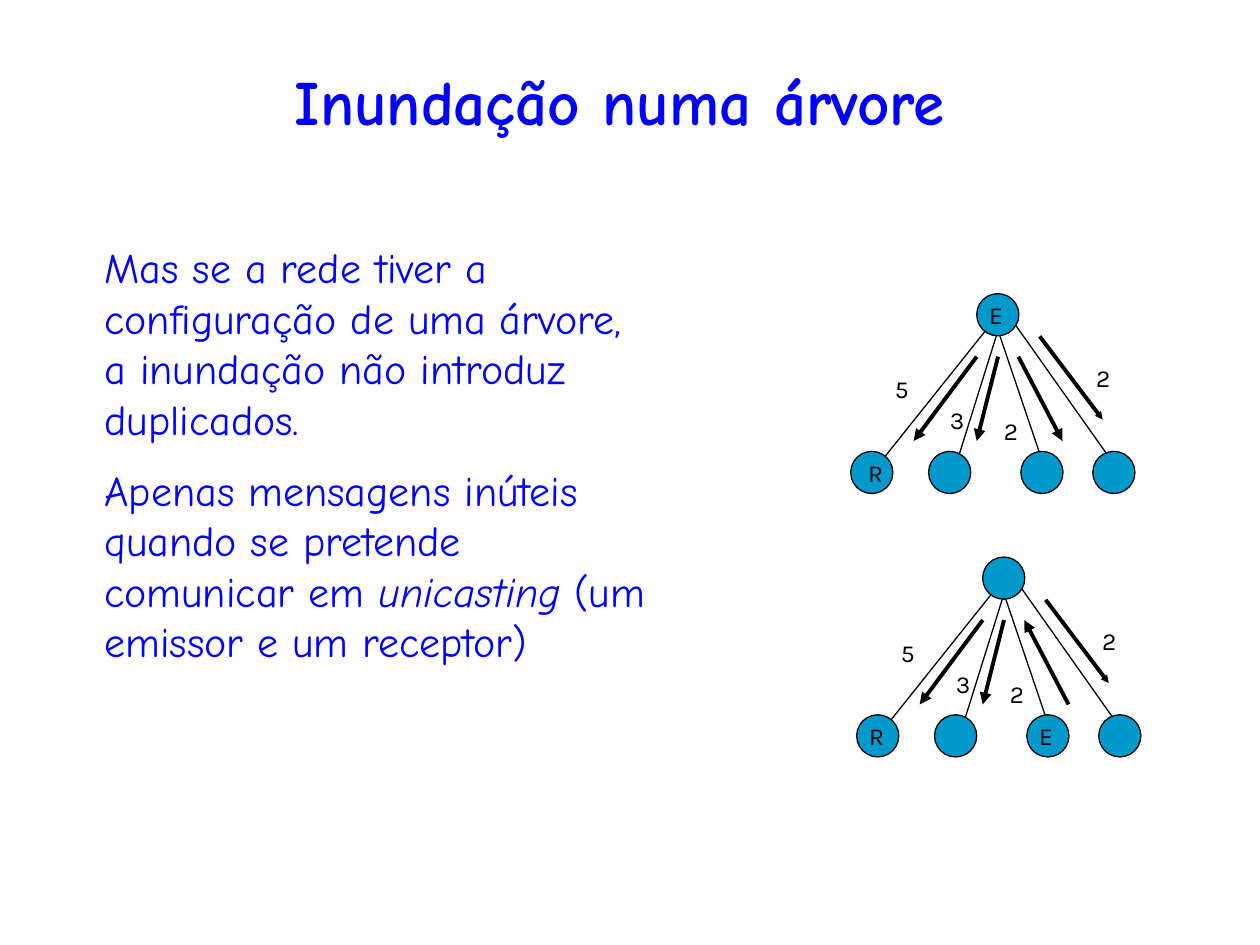
from lxml.etree import SubElement
from pptx import Presentation
from pptx.dml.color import RGBColor
from pptx.enum.shapes import MSO_CONNECTOR as Link, MSO_SHAPE as Shape
from pptx.enum.text import MSO_ANCHOR as Anchor, MSO_AUTO_SIZE as Fit, PP_ALIGN as Align
from pptx.oxml.ns import qn
from pptx.util import Cm, Pt

COLOURS = {"text": "0000FF", "node": "0099CC", "ink": "000000"}
TITLE_FONT = {"name": "Comic Neue", "size": Pt(36), "bold": True}
BODY_FONT = {"name": "Comic Neue", "size": Pt(24), "bold": False}
LABEL_FONT = {"name": "Karla", "size": Pt(14)}

NODE_SIZE = 0.85
ROOT = (2.54, 0)
LEAVES = [(left, 3.18) for left in (0, 1.57, 3.43, 4.88)]
EDGES = [((2.97, 0.74), (4.01, 3.81)), ((2.97, 0.43), (0.43, 3.61)),
         ((3.18, 0.43), (5.28, 3.4)), ((2.01, 3.81), (2.97, 0.74))]
MESSAGES = [((2.54, 1.27), (1.27, 2.97), "med"), ((2.97, 1.27), (2.54, 2.97), "med"),
            ((3.38, 1.27), (4.27, 2.97), "med"), ((3.81, 0.86), (5.08, 2.54), "sm")]
WEIGHTS = [("5", 0.64, 1.5), ("3", 1.75, 2.13), ("2", 2.84, 2.34), ("2", 4.7, 1.27)]

BODY = [
    [("Mas se a rede tiver a configuração de uma árvore, "
      "a inundação não introduz duplicados.", False)],
    [("Apenas mensagens inúteis quando se pretende comunicar em ", False),
     ("unicasting", True), (" (um emissor e um receptor)", False)],
]


def colour(name):
    """Return the named colour."""
    return RGBColor.from_string(COLOURS[name])


def write(para, text, style, ink, italic=False):
    """Add a formatted span to a paragraph."""
    span = para.add_run()
    span.text = text
    for key, value in {**style, "italic": italic}.items():
        setattr(span.font, key, value)
    span.font.color.rgb = colour(ink)


def place(shape, box):
    """Move a shape to a box given in centimetres."""
    for key, value in zip(("left", "top", "width", "height"), box):
        setattr(shape, key, Cm(value))


def add_title(page, box):
    """Fill the title placeholder."""
    title = page.shapes.title
    place(title, box)
    title.text_frame.vertical_anchor = Anchor.MIDDLE
    para = title.text_frame.paragraphs[0]
    para.alignment = Align.CENTER
    write(para, "Inundação numa árvore", TITLE_FONT, "text")


def add_body(page, box):
    """Fill the body placeholder with unbulleted paragraphs."""
    body = page.placeholders[1]
    place(body, box)
    frame = body.text_frame
    frame.auto_size = Fit.NONE
    for number, spans in enumerate(BODY):
        para = frame.add_paragraph() if number else frame.paragraphs[0]
        para.space_before = Pt(12)
        props = para._p.get_or_add_pPr()
        props.set("marL", "0")
        props.set("indent", "0")
        SubElement(props, qn("a:buNone"))
        for text, italic in spans:
            write(para, text, BODY_FONT, "text", italic)


def add_line(page, origin, start, end, width, head=None):
    """Draw a line between two points, with an optional arrowhead size."""
    points = [Cm(base + shift) for point in (start, end)
              for base, shift in zip(origin, point)]
    line = page.shapes.add_connector(Link.STRAIGHT, *points)
    line.line.color.rgb = colour("ink")
    line.line.width = Pt(width)
    if head:
        SubElement(line.line._get_or_add_ln(), qn("a:tailEnd"),
                   type="triangle", w=head, len=head)
    SubElement(line._element.spPr, qn("a:effectLst"))


def add_node(page, origin, spot):
    """Draw one network node."""
    left, top = (base + shift for base, shift in zip(origin, spot))
    node = page.shapes.add_shape(Shape.OVAL, Cm(left), Cm(top), Cm(NODE_SIZE), Cm(NODE_SIZE))
    node.shadow.inherit = False
    node.fill.solid()
    node.fill.fore_color.rgb = colour("node")
    node.line.color.rgb = colour("ink")
    node.line.width = Pt(0.75)


def add_label(page, origin, text, left, top):
    """Write a one-character label."""
    label = page.shapes.add_textbox(Cm(origin[0] + left), Cm(origin[1] + top), Cm(0.69), Cm(0.85))
    label.text_frame.word_wrap = False
    label.text_frame.auto_size = Fit.SHAPE_TO_FIT_TEXT
    write(label.text_frame.paragraphs[0], text, LABEL_FONT, "ink")


def add_tree(page, origin, names, reversed_message=None):
    """Draw a flooded tree; one message may run back to the root."""
    for number, (start, end, head) in enumerate(MESSAGES):
        if number == reversed_message:
            start, end = end, start
        add_line(page, origin, start, end, 2.25, head)
    for start, end in EDGES:
        add_line(page, origin, start, end, 0.75)
    for spot in [ROOT, *LEAVES]:
        add_node(page, origin, spot)
    for label in WEIGHTS + names:
        add_label(page, origin, *label)


def main():
    """Build the slide."""
    deck = Presentation()
    deck.slide_width, deck.slide_height = Cm(25.4), Cm(19.05)
    page = deck.slides.add_slide(deck.slide_layouts[1])
    add_title(page, (0.84, 1.07, 23.29, 1.9))
    add_body(page, (1.85, 4.75, 11.53, 12.67))
    add_tree(page, (17.15, 5.92), [("E", *ROOT), ("R", 0.1, 3.18)])
    add_tree(page, (17.27, 11.23), [("E", *LEAVES[2]), ("R", *LEAVES[0])], reversed_message=2)
    deck.save("out.pptx")


if __name__ == "__main__":
    main()
